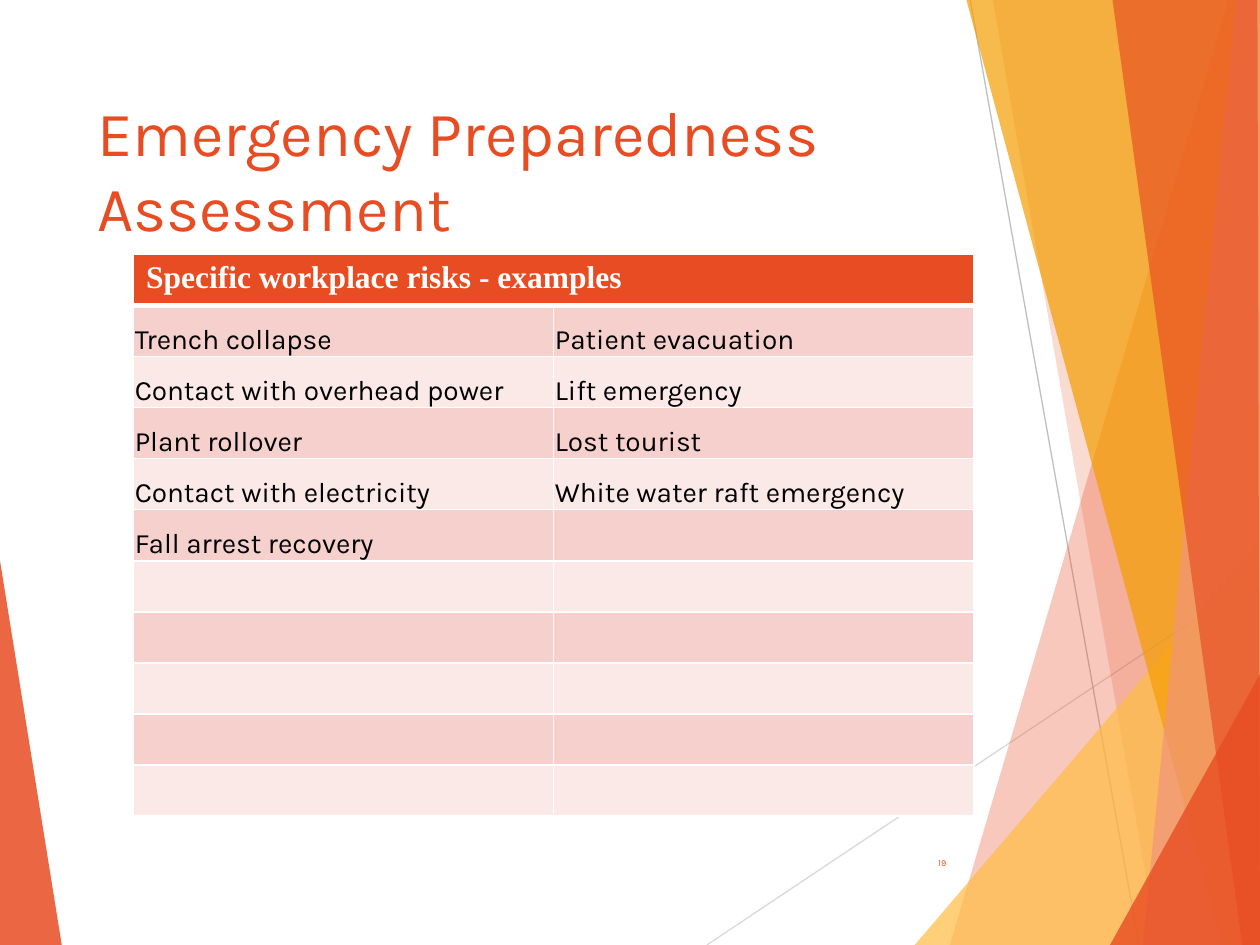
from lxml.etree import SubElement
from pptx import Presentation
from pptx.dml.color import RGBColor
from pptx.enum.shapes import MSO_CONNECTOR
from pptx.enum.text import MSO_ANCHOR as Anchor, PP_ALIGN as Align
from pptx.oxml.ns import qn
from pptx.util import Inches, Pt

ORANGE, AMBER, GOLD, SALMON = "E84C22", "F49D00", "FFBD47", "F1947A"
WHITE, BLACK = "FFFFFF", "000000"
BANDS = ("F6D0CD", "FBE9E8")

# corner points, colour, opacity in percent
LEFT_WEDGE = ([(0, 4.45), (0.49, 7.5), (0, 7.5)], ORANGE, 85)
RIGHT_FACETS = [
    ([(9.75, 0), (7.54, 7.5), (10, 7.5), (10, 0)], ORANGE, 30),
    ([(7.88, 0), (9.19, 7.5), (10, 7.5), (10, 0)], ORANGE, 20),
    ([(7.26, 7.5), (10, 4.29), (10, 7.5)], GOLD, 72),
    ([(7.67, 0), (9.7, 7.5), (10, 7.5), (10, 0)], AMBER, 70),
    ([(9.81, 0), (9.07, 7.5), (10, 7.5), (10, 0)], SALMON, 70),
    ([(8.83, 0), (9.86, 7.5), (10, 7.5), (9.98, 0)], ORANGE, 65),
    ([(8.81, 7.5), (10, 5.35), (10, 7.5)], ORANGE, 80),
]
RISKS = [
    ("Trench collapse", "Patient evacuation"),
    ("Contact with overhead power", "Lift emergency"),
    ("Plant rollover", "Lost tourist"),
    ("Contact with electricity", "White water raft emergency"),
    ("Fall arrest recovery", ""),
] + [("", "")] * 5


def rgb(color):
    return RGBColor.from_string(color)


class SlideBuilder:
    def __init__(self, slide, font="Karla"):
        self.slide = slide
        self.shapes = slide.shapes
        self.font = font

    def style(self, paragraph, size, color, font=None, bold=False):
        paragraph.font.name = font or self.font
        paragraph.font.size = Pt(size)
        paragraph.font.bold = bold
        paragraph.font.color.rgb = rgb(color)

    def facet(self, points, color, opacity):
        """Draw a translucent polygon without an outline."""
        corners = [(Inches(x), Inches(y)) for x, y in points]
        builder = self.shapes.build_freeform(*corners[0])
        builder.add_line_segments(corners[1:], close=True)
        facet = builder.convert_to_shape()
        facet.shadow.inherit = False
        facet.line.fill.background()
        facet.fill.solid()
        facet.fill.fore_color.rgb = rgb(color)
        tint = facet._element.spPr.find(".//" + qn("a:srgbClr"))
        SubElement(tint, qn("a:alpha"), val=str(opacity * 1000))

    def line(self, start, end, color):
        ends = [Inches(value) for value in (*start, *end)]
        line = self.shapes.add_connector(MSO_CONNECTOR.STRAIGHT, *ends)
        line.line.color.rgb = rgb(color)
        line.line.width = Pt(0.75)
        SubElement(line._element.spPr, qn("a:effectLst"))

    def title(self, text, left, top, width, height):
        title = self.shapes.title
        self.shapes._spTree.append(title._element)  # in front of the facets
        title.left, title.top = Inches(left), Inches(top)
        title.width, title.height = Inches(width), Inches(height)
        title.text_frame.text = text
        title.text_frame.word_wrap = True
        title.text_frame.vertical_anchor = Anchor.TOP
        heading = title.text_frame.paragraphs[0]
        heading.alignment = Align.LEFT
        self.style(heading, 36, ORANGE)

    def page_number(self, text, left, top, width, height):
        """Add the number as a small subscript, aligned right."""
        box = self.shapes.add_textbox(*map(Inches, (left, top, width, height)))
        box.text_frame.word_wrap = True
        box.text_frame.vertical_anchor = Anchor.MIDDLE
        number = box.text_frame.paragraphs[0]
        number.text = text
        number.alignment = Align.RIGHT
        self.style(number, 9, ORANGE)
        number.runs[0]._r.get_or_add_rPr().set("baseline", "-25000")

    def cell(self, cell, fill, top=1, bottom=1):
        """Set the white borders (widths in points) and the fill of a cell."""
        widths = {"a:lnL": 1, "a:lnR": 1, "a:lnT": top, "a:lnB": bottom}
        properties = cell._tc.get_or_add_tcPr()
        for side, width in widths.items():
            border = SubElement(properties, qn(side), w=str(Pt(width)))
            solid = SubElement(border, qn("a:solidFill"))
            SubElement(solid, qn("a:srgbClr"), val=WHITE)
        cell.fill.solid()
        cell.fill.fore_color.rgb = rgb(fill)

    def table(self, header, rows, left, top, width, height):
        frame = self.shapes.add_table(
            len(rows) + 1, 2, *map(Inches, (left, top, width, height)))
        table = frame.table
        for head in table.rows[0].cells:
            self.cell(head, ORANGE, bottom=3)
        heading = table.cell(0, 0)
        heading.merge(table.cell(0, 1))
        heading.text = header
        self.style(heading.text_frame.paragraphs[0], 18, WHITE,
                   "Times New Roman", bold=True)
        for row, texts in enumerate(rows, start=1):
            for column, text in enumerate(texts):
                cell = table.cell(row, column)
                self.cell(cell, BANDS[(row - 1) % 2], top=3 if row == 1 else 1)
                cell.margin_left = cell.margin_right = Inches(0.01)
                cell.margin_top, cell.margin_bottom = Inches(0.01), 0
                cell.vertical_anchor = Anchor.BOTTOM
                cell.text = text
                self.style(cell.text_frame.paragraphs[0], 16, BLACK)


def main():
    deck = Presentation()
    deck.slide_width, deck.slide_height = Inches(10), Inches(7.5)
    page = SlideBuilder(deck.slides.add_slide(deck.slide_layouts[5]))

    page.facet(*LEFT_WEDGE)
    page.line((5.61, 7.5), (10, 4.57), "D9D9D9")
    page.line((7.7, 0), (9.04, 7.5), "BFBFBF")
    for facet in RIGHT_FACETS:
        page.facet(*facet)

    page.title("Emergency Preparedness Assessment", 0.67, 0.69, 8.43, 0.93)
    page.page_number("19", 7.05, 6.61, 0.56, 0.4)
    page.table("Specific workplace risks - examples", RISKS,
               1.06, 2.02, 6.67, 4.46)
    deck.save("out.pptx")


if __name__ == "__main__":
    main()
